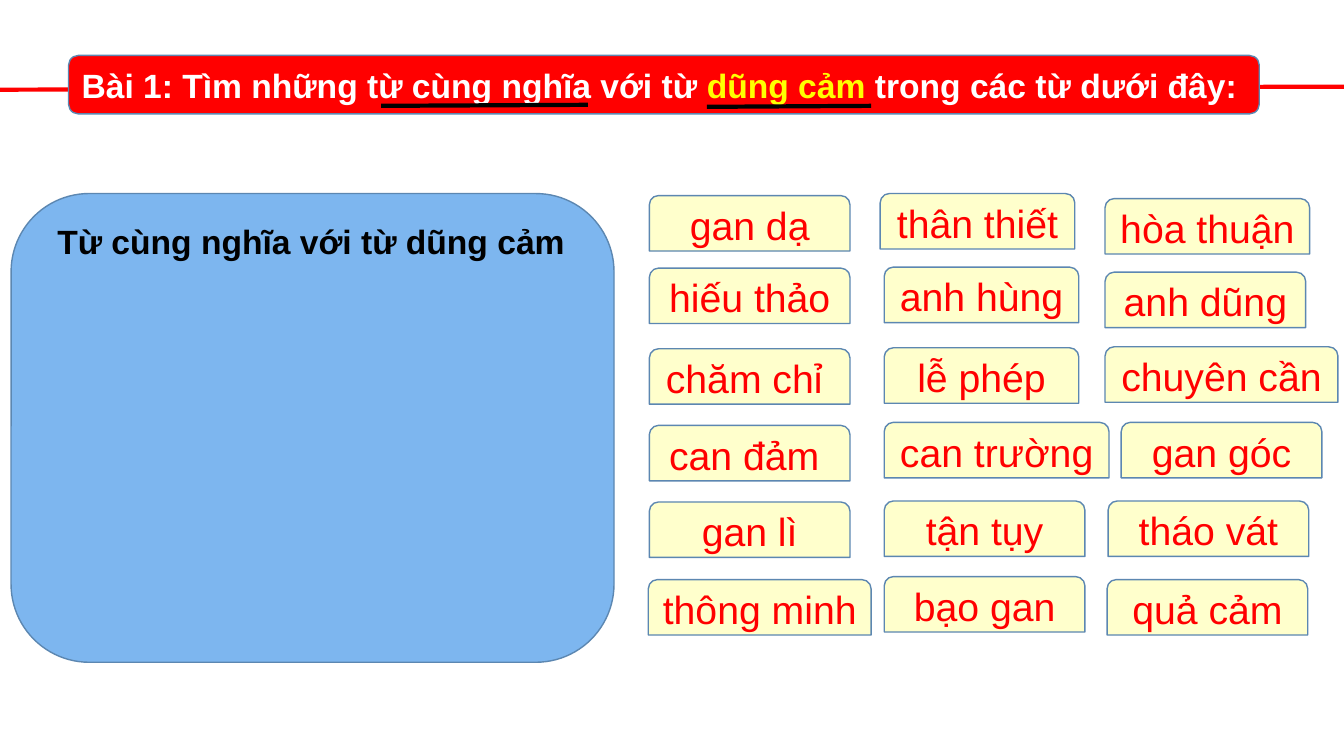
from lxml import etree
from pptx import Presentation
from pptx import util as u
from pptx.dml.color import RGBColor
from pptx.enum import shapes, text
from pptx.oxml.ns import qn

RED = RGBColor(0xFF, 0x00, 0x00)
WHITE = RGBColor(0xFF, 0xFF, 0xFF)
YELLOW = RGBColor(0xFF, 0xFF, 0x00)
BLACK = RGBColor(0x00, 0x00, 0x00)
CREAM = RGBColor(0xFF, 0xFF, 0xCC)
SKY = RGBColor(0x7D, 0xB6, 0xEF)
STEEL = RGBColor(0x5C, 0x87, 0xB1)

EMU_PER_PX = 9144
CARD_HEIGHT = 55
WORD_CARDS = [
    ("gan dạ", 644, 194, 199),
    ("thân thiết", 873, 192, 193),
    ("hòa thuận ", 1096, 197, 203),
    ("hiếu thảo", 644, 266, 199),
    ("anh hùng", 877, 265, 193),
    ("anh dũng", 1096, 270, 199),
    ("chăm chỉ ", 644, 346, 199),
    ("lễ phép", 877, 345, 193),
    ("chuyên cần", 1096, 344, 231),
    ("can đảm ", 644, 422, 199),
    ("can trường", 877, 419, 223),
    ("gan góc", 1112, 419, 199),
    ("gan lì", 644, 498, 199),
    ("tận tụy", 877, 497, 199),
    ("tháo vát", 1099, 497, 199),
    ("thông minh", 643, 575, 221),
    ("bạo gan", 877, 572, 199),
    ("quả cảm", 1098, 575, 199),
]


def px(*lengths):
    return [u.Emu(length * EMU_PER_PX) for length in lengths]


class Exercise:
    font = "Arial"

    def __init__(self, deck):
        self.slide = deck.slides.add_slide(deck.slide_layouts[6])

    def fill_text(self, frame, runs, size, bold, align):
        frame.word_wrap = True
        paragraph = frame.paragraphs[0]
        paragraph.alignment = align
        style = {"name": self.font, "size": u.Pt(size), "bold": bold}
        for words, color in runs:
            run = paragraph.add_run()
            run.text = words
            for key, value in style.items():
                setattr(run.font, key, value)
            run.font.color.rgb = color

    def panel(self, kind, bounds, fill, runs=(), size=24, bold=False):
        panel = self.slide.shapes.add_shape(kind, *px(*bounds))
        panel.shadow.inherit = False
        panel.fill.solid()
        panel.fill.fore_color.rgb = fill
        panel.line.color.rgb = STEEL
        panel.line.width = u.Pt(1)
        panel.text_frame.vertical_anchor = text.MSO_ANCHOR.MIDDLE
        self.fill_text(panel.text_frame, runs, size, bold, text.PP_ALIGN.CENTER)

    def label(self, bounds, words):
        label = self.slide.shapes.add_textbox(*px(*bounds))
        label.text_frame.auto_size = text.MSO_AUTO_SIZE.SHAPE_TO_FIT_TEXT
        self.fill_text(label.text_frame, [(words, BLACK)], 24, True, text.PP_ALIGN.LEFT)

    def rule(self, ends, color):
        rule = self.slide.shapes.add_connector(shapes.MSO_CONNECTOR.STRAIGHT, *px(*ends))
        rule.line.color.rgb = color
        rule.line.width = u.Pt(3)
        etree.SubElement(rule._element.spPr, qn("a:effectLst"))


def main():
    deck = Presentation()
    deck.slide_width, deck.slide_height = px(1333, 750)
    exercise = Exercise(deck)
    rounded = shapes.MSO_SHAPE.ROUNDED_RECTANGLE
    card = shapes.MSO_SHAPE.ROUND_2_SAME_RECTANGLE

    exercise.rule((0, 89, 1333, 86), RED)
    question = [
        ("Bài 1: Tìm những từ cùng nghĩa với từ ", WHITE),
        ("dũng cảm ", YELLOW),
        ("trong các từ dưới đây: ", WHITE),
    ]
    exercise.panel(rounded, (68, 55, 1181, 58), RED, question, bold=True)

    exercise.panel(rounded, (11, 192, 598, 465), SKY)
    exercise.label((47, 214, 527, 50), "Từ cùng nghĩa với từ dũng cảm")

    for word, left, top, width in WORD_CARDS:
        exercise.panel(card, (left, top, width, CARD_HEIGHT), CREAM, [(word, RED)], size=28)

    for underline in ((378, 105, 583, 104), (701, 106, 864, 105)):
        exercise.rule(underline, BLACK)

    deck.save("out.pptx")


if __name__ == "__main__":
    main()
